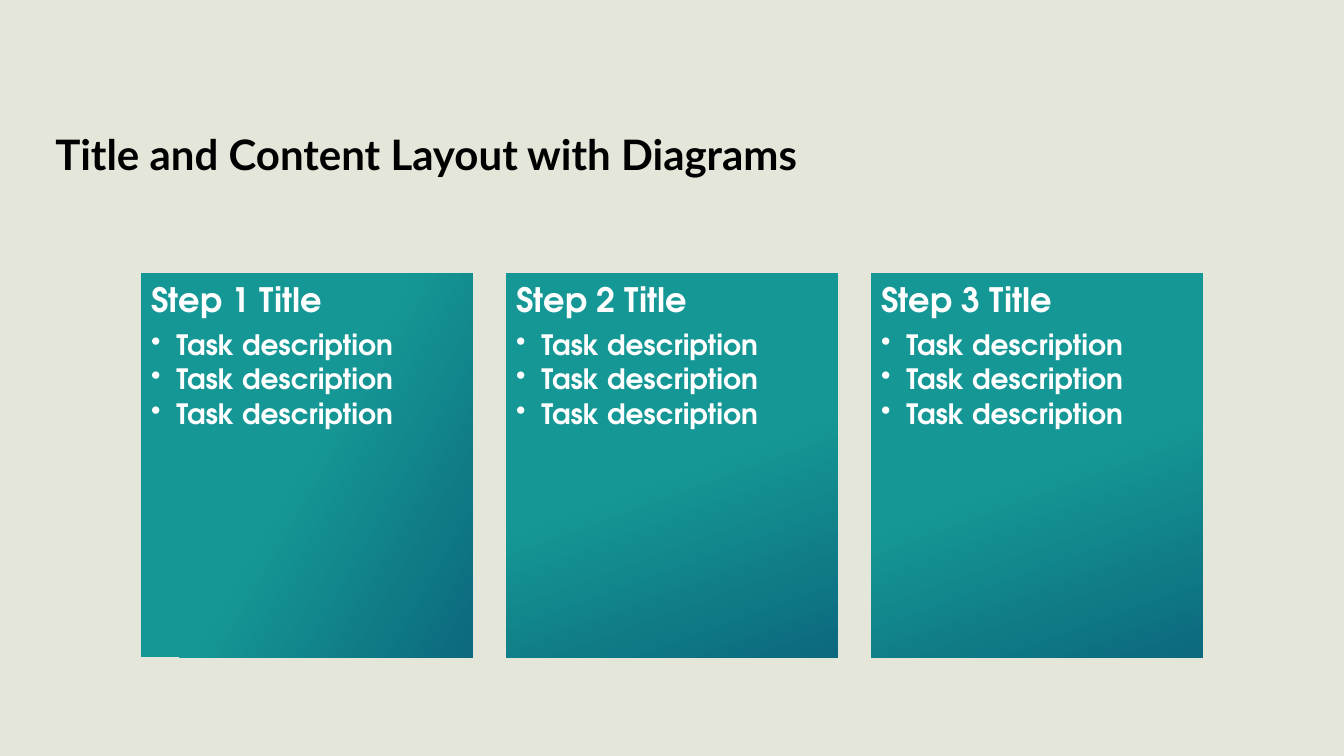
from copy import deepcopy
from dataclasses import dataclass

from lxml import etree
from pptx import Presentation
from pptx.dml.color import RGBColor
from pptx.enum import shapes, text
from pptx.oxml import ns
from pptx.util import Inches, Pt

# Content
TITLE = "Title and Content Layout with Diagrams"
TASKS = ["Task description"] * 3
STEPS = [  # heading, tasks, gradient angle (clockwise), gradient stops in percent
    ("Step 1 Title", TASKS, 30, (1, 47, 100)),
    ("Step 2 Title", TASKS, 70, (0, 50, 100)),
    ("Step 3 Title", TASKS, 70, (0, 50, 100)),
]


@dataclass(frozen=True)
class Theme:
    background: str = "E5E6DA"
    ink: str = "000000"
    light: str = "FFFFFF"
    teal: str = "159895"
    deep: str = "0C697E"
    title_font: str = "Lato"
    body_font: str = "TeX Gyre Adventor"
    title_size: int = 30
    heading_size: int = 24
    task_size: int = 20


THEME = Theme()

# Layout, in inches
CARD_LEFT, CARD_TOP = 1.4, 2.71
CARD_WIDTH, CARD_HEIGHT = 3.29, 3.81
CARD_PITCH = 3.62
CARD_INSET = 0.1
BULLET_INDENT = 0.25


def write(para, words, *, font, size, color, line=0.9, after=0, bullet=False):
    """Fill one paragraph with bold text, bulleted on request."""
    if bullet:
        properties = para._p.get_or_add_pPr()
        properties.set("marL", str(Inches(BULLET_INDENT)))
        properties.set("indent", str(-Inches(BULLET_INDENT)))
        etree.SubElement(properties, ns.qn("a:buChar")).set("char", "•")
    para.alignment = text.PP_ALIGN.LEFT
    para.line_spacing = line
    para.space_before = Pt(0)
    para.space_after = Pt(after)
    span = para.add_run()
    span.text = words
    span.font.name = font
    span.font.size = Pt(size)
    span.font.bold = True
    span.font.color.rgb = RGBColor.from_string(color)


def shade(card, angle, positions):
    """Give a card its three-stop gradient."""
    fill = card.fill
    fill.gradient()
    fill.gradient_angle = 360 - angle
    stop_list = card._element.spPr.find(ns.qn("a:gradFill")).find(ns.qn("a:gsLst"))
    stop_list.append(deepcopy(stop_list[-1]))
    colors = (THEME.teal, THEME.teal, THEME.deep)
    for stop, position, color in zip(fill.gradient_stops, positions, colors):
        stop.position = position / 100
        stop.color.rgb = RGBColor.from_string(color)


def add_card(page, left, heading, tasks, angle, positions):
    card = page.shapes.add_shape(
        shapes.MSO_SHAPE.RECTANGLE, Inches(left), Inches(CARD_TOP),
        Inches(CARD_WIDTH), Inches(CARD_HEIGHT))
    card.shadow.inherit = False
    card.line.fill.background()
    shade(card, angle, positions)

    frame = card.text_frame
    frame.word_wrap = True
    frame.vertical_anchor = text.MSO_ANCHOR.TOP
    frame.margin_left = frame.margin_right = Inches(CARD_INSET)
    frame.margin_top = frame.margin_bottom = Inches(CARD_INSET)
    write(frame.paragraphs[0], heading, font=THEME.body_font, color=THEME.light,
          size=THEME.heading_size, after=0.35 * THEME.heading_size)
    for task in tasks:
        write(frame.add_paragraph(), task, font=THEME.body_font, color=THEME.light,
              size=THEME.task_size, after=0.15 * THEME.task_size, bullet=True)


def main():
    deck = Presentation()
    deck.slide_width, deck.slide_height = Inches(13.33), Inches(7.5)
    page = deck.slides.add_slide(deck.slide_layouts[6])
    page.background.fill.solid()
    page.background.fill.fore_color.rgb = RGBColor.from_string(THEME.background)

    # Title
    box = page.shapes.add_textbox(Inches(0.45), Inches(1.09), Inches(12.51), Inches(0.91))
    box.text_frame.word_wrap = True
    box.text_frame.vertical_anchor = text.MSO_ANCHOR.MIDDLE
    write(box.text_frame.paragraphs[0], TITLE, font=THEME.title_font,
          size=THEME.title_size, color=THEME.ink, line=0.95)

    # Step cards
    for index, step in enumerate(STEPS):
        add_card(page, CARD_LEFT + index * CARD_PITCH, *step)

    deck.save("out.pptx")


if __name__ == "__main__":
    main()
